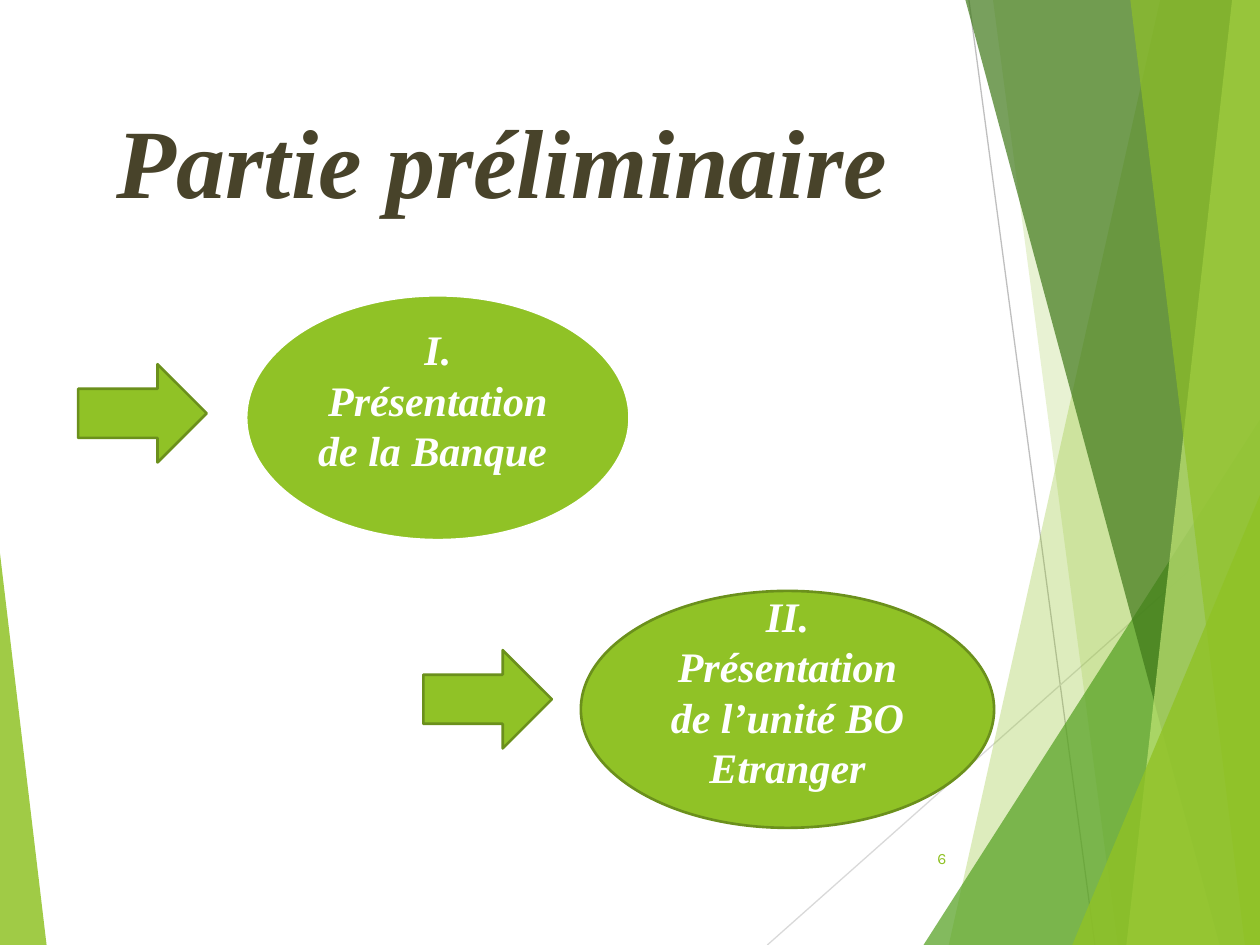
import dataclasses
import typing

import pptx
import pptx.dml.color
import pptx.enum.shapes
import pptx.enum.text
import pptx.oxml.ns
import pptx.util
from lxml import etree

FORM = pptx.enum.shapes.MSO_SHAPE
ALIGN = pptx.enum.text.PP_ALIGN
ANCHOR = pptx.enum.text.MSO_ANCHOR
COLS, ROWS = 100, 75


@dataclasses.dataclass(frozen=True)
class Theme:
    lime: str = "90C226"
    olive: str = "6B901C"
    leaf: str = "54A021"
    moss: str = "3F7819"
    pale: str = "C0E474"
    white: str = "FFFFFF"
    ink: str = "48432A"
    serif: str = "Times New Roman"
    sans: str = "Karla"
    title: float = 56
    body: float = 24
    lead: float = 28.8
    note: float = 9


class Box(typing.NamedTuple):
    """Place on the grid, in columns and rows."""
    left: float
    top: float
    wide: float
    high: float


class Ray(typing.NamedTuple):
    start: tuple[float, float]
    end: tuple[float, float]
    color: str


class Band(typing.NamedTuple):
    """Facet from a top column and a foot column to the right edge."""
    top: float
    foot: float
    color: str
    alpha: int


class Peak(typing.NamedTuple):
    """Triangle with its tip at the left (0) or right (1)."""
    box: Box
    tip: int
    color: str
    alpha: int


class Topic(typing.NamedTuple):
    text: str
    box: Box
    edge: str
    width: float
    arrow: tuple[float, float]


T = Theme()
RAYS = [Ray((76.9, 0), (86.9, ROWS), "BFBFBF"),
        Ray((COLS, 40.3), (60.9, ROWS), "D9D9D9")]
FACETS = [
    Band(92.1, 75.3, T.lime, 30),
    Band(78.8, 88.7, T.lime, 20),
    Peak(Box(73.3, 33.3, 26.7, 41.7), 1, T.leaf, 72),
    Band(76.6, 96.8, T.moss, 70),
    Band(97.8, 89.4, T.pale, 70),
    Band(89.7, 98.8, T.lime, 65),
    Peak(Box(85.1, 39.3, 14.9, 35.7), 1, T.lime, 80),
    Peak(Box(0, 43.9, 3.7, 31.1), 0, T.lime, 85),
]
TOPICS = [
    Topic("I. Présentation de la Banque ", Box(19.5, 23.4, 30.5, 19.5),
          T.white, 2, (6.2, 28.9)),
    Topic("II. Présentation de l’unité BO Etranger", Box(46.1, 46.9, 32.8, 18.8),
          T.olive, 1.5, (33.6, 51.6)),
]

deck = pptx.Presentation()
deck.slide_width = pptx.util.Inches(10)
deck.slide_height = pptx.util.Inches(7.5)
slide = deck.slides.add_slide(deck.slide_layouts[6])
shapes = slide.shapes


def col(n: float) -> int:
    return round(deck.slide_width * n / COLS)


def row(n: float) -> int:
    return round(deck.slide_height * n / ROWS)


def place(box: Box) -> tuple[int, int, int, int]:
    return col(box.left), row(box.top), col(box.wide), row(box.high)


def rgb(code: str):
    return pptx.dml.color.RGBColor.from_string(code)


def paint(shape, color: str, alpha: int = 100, edge: str = "", width: float = 0) -> None:
    shape.shadow.inherit = False
    shape.fill.solid()
    shape.fill.fore_color.rgb = rgb(color)
    if alpha < 100:
        tint = next(shape.element.spPr.iter(pptx.oxml.ns.qn("a:srgbClr")))
        etree.SubElement(tint, pptx.oxml.ns.qn("a:alpha"), val=str(alpha * 1000))
    if edge:
        shape.line.color.rgb = rgb(edge)
        shape.line.width = pptx.util.Pt(width)
    else:
        shape.line.fill.background()


def write(shape, text: str, *, font: str, size: float, color: str,
          align=ALIGN.CENTER, anchor=ANCHOR.MIDDLE, strong: bool = False,
          lead: float = 0, top: float = 0.5, foot: float = 0.5) -> None:
    frame = shape.text_frame
    frame.word_wrap = True
    frame.vertical_anchor = anchor
    frame.margin_left = frame.margin_right = col(1)
    frame.margin_top, frame.margin_bottom = row(top), row(foot)
    para = frame.paragraphs[0]
    para.alignment = align
    if lead:
        para.line_spacing = pptx.util.Pt(lead)
    run = para.add_run()
    run.text = text
    run.font.name, run.font.size = font, pptx.util.Pt(size)
    run.font.bold = run.font.italic = strong
    run.font.color.rgb = rgb(color)


def draw_ray(ray: Ray) -> None:
    line = shapes.add_connector(
        pptx.enum.shapes.MSO_CONNECTOR.STRAIGHT,
        col(ray.start[0]), row(ray.start[1]), col(ray.end[0]), row(ray.end[1]))
    line.line.color.rgb = rgb(ray.color)
    line.line.width = pptx.util.Pt(0.75)
    etree.SubElement(line.element.spPr, pptx.oxml.ns.qn("a:effectLst"))


def draw_facet(facet: Band | Peak) -> None:
    if isinstance(facet, Peak):
        shape = shapes.add_shape(FORM.ISOSCELES_TRIANGLE, *place(facet.box))
        shape.adjustments[0] = facet.tip
    else:
        pen = shapes.build_freeform(col(facet.top), row(-0.1))
        pen.add_line_segments([(col(COLS), row(-0.1)), (col(COLS), row(ROWS)),
                               (col(facet.foot), row(ROWS))], close=True)
        shape = pen.convert_to_shape()
    paint(shape, facet.color, facet.alpha)


def draw_topic(topic: Topic) -> None:
    oval = shapes.add_shape(FORM.OVAL, *place(topic.box))
    paint(oval, T.lime, edge=topic.edge, width=topic.width)
    write(oval, topic.text, font=T.serif, size=T.body, color=T.white,
          strong=True, lead=T.lead, foot=3.4)
    arrow = shapes.add_shape(FORM.RIGHT_ARROW, *place(Box(*topic.arrow, 10.2, 7.8)))
    paint(arrow, T.lime, edge=T.olive, width=1.5)


# Background rays and facets
for ray in RAYS:
    draw_ray(ray)
for facet in FACETS:
    draw_facet(facet)

# Page number
page = shapes.add_textbox(*place(Box(70.5, 66.1, 5.6, 4)))
write(page, "6", font=T.sans, size=T.note, color=T.lime, align=ALIGN.RIGHT)

# Topics with their arrows
for topic in TOPICS:
    draw_topic(topic)

# Title
title = shapes.add_textbox(*place(Box(5.6, 6.7, 70.5, 14.4)))
write(title, "Partie préliminaire ", font=T.serif, size=T.title, color=T.ink,
      anchor=ANCHOR.TOP, strong=True, top=1.3)

deck.save("out.pptx")
